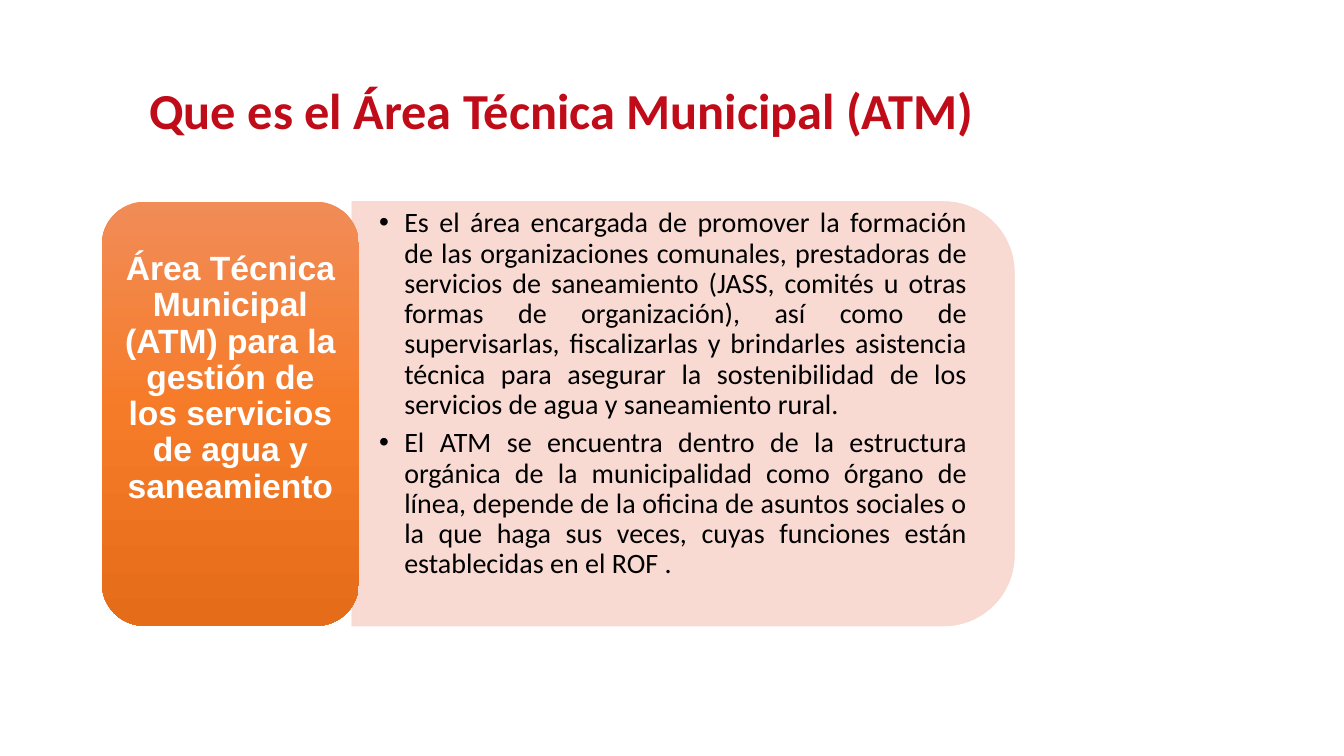
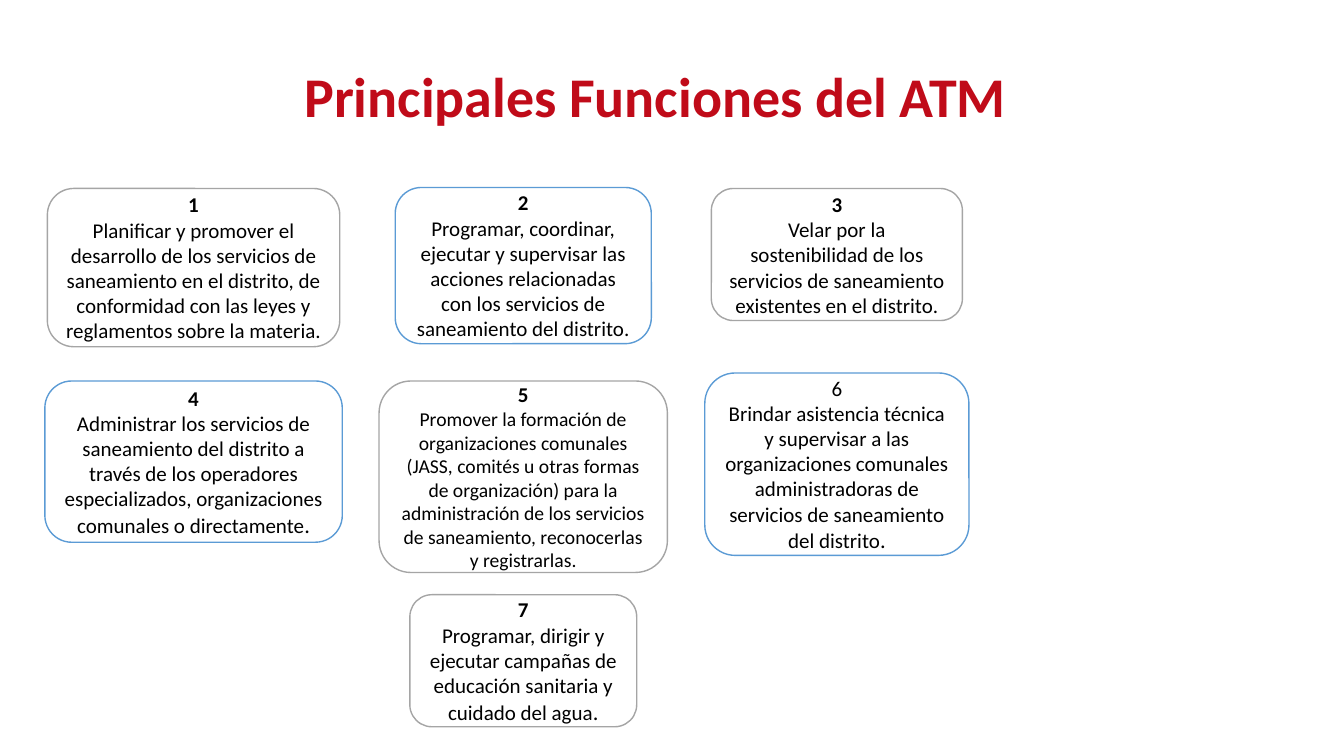
from copy import deepcopy

from lxml.etree import SubElement
from pptx import Presentation
from pptx.dml.color import RGBColor
from pptx.enum.shapes import MSO_SHAPE
from pptx.enum.text import MSO_ANCHOR, PP_ALIGN
from pptx.oxml.ns import qn
from pptx.util import Inches, Pt

COLORS = {
    "title": "C00B19", "text": "000000", "white": "FFFFFF", "panel": "F8D7CE",
    "grey": "A5A5A5", "blue": "5B9BD5",
    "orange": ("F18C57", "F67B28", "E56C19"),
}


def style(paragraph, size, color="text", bold=False, font="Calibri", align=PP_ALIGN.CENTER):
    paragraph.alignment = align
    for run in paragraph.runs:
        run.font.name = font
        run.font.size = Pt(size)
        run.font.bold = bold
        run.font.color.rgb = RGBColor.from_string(COLORS[color])


def add_title(text, left, top, width, height, size):
    slide = deck.slides.add_slide(deck.slide_layouts[6])
    box = slide.shapes.add_textbox(Inches(left), Inches(top), Inches(width), Inches(height))
    frame = box.text_frame
    frame.word_wrap = True
    frame.vertical_anchor = MSO_ANCHOR.MIDDLE
    frame.text = text
    frame.paragraphs[0].line_spacing = 0.9
    style(frame.paragraphs[0], size, "title", bold=True)
    return slide


deck = Presentation()
deck.slide_width, deck.slide_height = Inches(13.33), Inches(7.5)

# Slide 1: what the ATM is
slide = add_title("Que es el Área Técnica Municipal (ATM)", 0.1, 0.8, 10.94, 0.65, 36)

BAND_TOP, BAND_HEIGHT = 2, 4.21
PANEL_LEFT, PANEL_WIDTH = 3.49, 6.57

# The panel is turned a quarter, so its width and height swap around its centre
turn = (PANEL_WIDTH - BAND_HEIGHT) / 2
panel = slide.shapes.add_shape(
    MSO_SHAPE.ROUND_2_SAME_RECTANGLE, Inches(PANEL_LEFT + turn), Inches(BAND_TOP - turn),
    Inches(BAND_HEIGHT), Inches(PANEL_WIDTH))
panel.rotation = 90
panel.shadow.inherit = False
panel.line.width = Pt(0.5)
for paint in (panel.fill, panel.line.fill):
    paint.solid()
    paint.fore_color.rgb = RGBColor.from_string(COLORS["panel"])
for color in panel._element.spPr.iter(qn("a:srgbClr")):
    SubElement(color, qn("a:alpha"), val="90000")

DEFINITION = (
    "Es el área encargada de promover la formación de las organizaciones comunales, "
    "prestadoras de servicios de saneamiento (JASS, comités u otras formas de organización), "
    "así como de supervisarlas, fiscalizarlas y brindarles asistencia técnica para asegurar "
    "la sostenibilidad de los servicios de agua y saneamiento rural.",
    "El ATM se encuentra dentro de la estructura orgánica de la municipalidad como órgano de "
    "línea, depende de la oficina de asuntos sociales o la que haga sus veces, cuyas "
    "funciones están establecidas en el ROF .",
)
definition = slide.shapes.add_textbox(
    Inches(PANEL_LEFT), Inches(BAND_TOP + 0.07), Inches(6.37), Inches(4)).text_frame
definition.word_wrap = True
definition.margin_left = definition.margin_right = Inches(0.27)
definition.margin_top = definition.margin_bottom = 0
definition.text = "\n".join(DEFINITION)
for paragraph in definition.paragraphs:
    properties = paragraph._p.get_or_add_pPr()
    properties.set("marL", str(Inches(0.25)))
    properties.set("indent", str(-Inches(0.25)))
    SubElement(properties, qn("a:buFont"), typeface="Arial")
    SubElement(properties, qn("a:buChar"), char="•")
    paragraph.line_spacing = 0.9
    paragraph.space_after = Pt(6)
    style(paragraph, 20, align=PP_ALIGN.JUSTIFY)

area = slide.shapes.add_shape(
    MSO_SHAPE.ROUNDED_RECTANGLE, Inches(1.01), Inches(BAND_TOP), Inches(2.55), Inches(BAND_HEIGHT))
area.shadow.inherit = False
area.line.fill.background()
area.fill.gradient()
stops = area._element.spPr.find(".//" + qn("a:gsLst"))
stops.insert(1, deepcopy(stops[0]))
for index, stop in enumerate(area.fill.gradient_stops):
    stop.position = index / 2
    stop.color.rgb = RGBColor.from_string(COLORS["orange"][index])
area.fill.gradient_angle = 270
label = area.text_frame
label.word_wrap = True
label.vertical_anchor = MSO_ANCHOR.MIDDLE
label.margin_bottom = Inches(0.75)
label.text = "Área Técnica Municipal (ATM) para la gestión de los servicios de agua y saneamiento"
label.paragraphs[0].line_spacing = 0.9
style(label.paragraphs[0], 24, "white", bold=True, font="Arial")

# Slide 2: the seven functions
slide = add_title("Principales Funciones del ATM", 1.25, 0.63, 10.5, 0.71, 40)

COLUMN_CENTERS = (1.92, 5.19, 8.3)
# column, top, width, height, text size, final stop size, text
FUNCTIONS = (
    (0, 1.87, 2.9, 1.57, 15, 15,
     "Planificar y promover el desarrollo de los servicios de saneamiento en el distrito, "
     "de conformidad con las leyes y reglamentos sobre la materia."),
    (1, 1.86, 2.54, 1.55, 15, 15,
     "Programar, coordinar, ejecutar y supervisar las acciones relacionadas con los "
     "servicios de saneamiento del distrito."),
    (2, 1.87, 2.49, 1.31, 15, 15,
     "Velar por la sostenibilidad de los servicios de saneamiento existentes en el distrito."),
    (0, 3.78, 2.95, 1.6, 15, 16,
     "Administrar los servicios de saneamiento del distrito a través de los operadores "
     "especializados, organizaciones comunales o directamente."),
    (1, 3.78, 2.86, 1.9, 14, 14,
     "Promover la formación de organizaciones comunales (JASS, comités u otras formas de "
     "organización) para la administración de los servicios de saneamiento, reconocerlas "
     "y registrarlas."),
    (2, 3.7, 2.62, 1.81, 15, 16,
     "Brindar asistencia técnica y supervisar a las organizaciones comunales "
     "administradoras de servicios de saneamiento del distrito."),
    (1, 5.9, 2.25, 1.31, 15, 16,
     "Programar, dirigir y ejecutar campañas de educación sanitaria y cuidado del agua."),
)
for number, (column, top, width, height, size, stop_size, text) in enumerate(FUNCTIONS, 1):
    card = slide.shapes.add_shape(
        MSO_SHAPE.ROUNDED_RECTANGLE, Inches(COLUMN_CENTERS[column] - width / 2), Inches(top),
        Inches(width), Inches(height))
    card.shadow.inherit = False
    card.fill.solid()
    card.fill.fore_color.rgb = RGBColor.from_string(COLORS["white"])
    card.line.width = Pt(1)
    card.line.color.rgb = RGBColor.from_string(COLORS["grey" if number % 2 else "blue"])
    frame = card.text_frame
    frame.word_wrap = True
    frame.vertical_anchor = MSO_ANCHOR.MIDDLE
    frame.text = str(number)
    style(frame.paragraphs[0], 15, bold=number != 6)
    duty = frame.add_paragraph()
    duty.text = text[:-1]
    final_stop = duty.add_run()
    final_stop.text = text[-1]
    style(duty, size)
    final_stop.font.size = Pt(stop_size)

deck.save("out.pptx")
